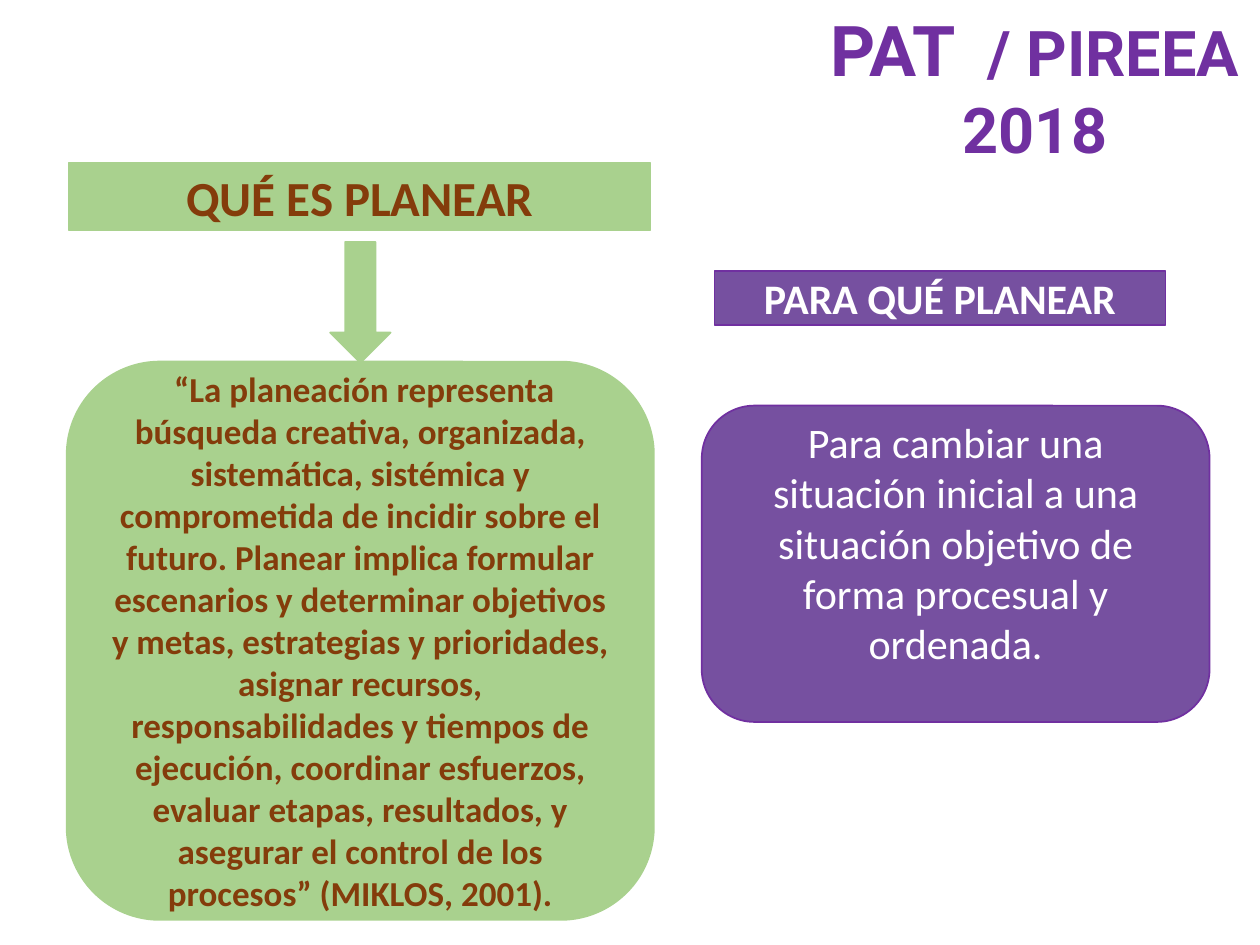
from pptx import Presentation
from pptx.dml.color import RGBColor
from pptx.enum.shapes import MSO_SHAPE
from pptx.enum.text import MSO_ANCHOR, PP_ALIGN
from pptx.util import Inches, Pt

RECT = MSO_SHAPE.RECTANGLE
ROUND = MSO_SHAPE.ROUNDED_RECTANGLE
ARROW = MSO_SHAPE.DOWN_ARROW
MIDDLE = MSO_ANCHOR.MIDDLE
CENTER = PP_ALIGN.CENTER

GREEN = RGBColor(0xA9, 0xD1, 0x8E)
BROWN = RGBColor(0x84, 0x3C, 0x0B)
PLUM = RGBColor(0x76, 0x50, 0xA0)
PURPLE = RGBColor(0x70, 0x30, 0xA0)
WHITE = RGBColor(0xFF, 0xFF, 0xFF)

WIDE, HIGH = Inches(10), Inches(7.5)

QUOTE = (
    " “La planeación representa búsqueda creativa, organizada, sistemática, "
    "sistémica y comprometida de incidir sobre el futuro. Planear implica "
    "formular escenarios y determinar objetivos y metas, estrategias y "
    "prioridades, asignar recursos, responsabilidades y tiempos de ejecución, "
    "coordinar esfuerzos, evaluar etapas, resultados, y asegurar el control "
    "de los procesos” (MIKLOS, 2001)."
)
PURPOSE = (
    "Para cambiar una situación inicial a una situación objetivo "
    "de forma procesual y ordenada."
)


def area(left, top, width, height):
    """Turn percentages of the slide's width and height into lengths."""
    return [round(share * full / 100) for share, full in
            zip((left, top, width, height), (WIDE, HIGH, WIDE, HIGH))]


def write(para, text, size, color, font="Calibri", bold=True):
    para.alignment = CENTER
    run = para.add_run()
    run.text = text
    run.font.name = font
    run.font.size = Pt(size)
    run.font.bold = bold
    run.font.color.rgb = color


def add_title(slide):
    frame = slide.shapes.add_textbox(*area(64.3, 0, 35.7, 18.4)).text_frame
    frame.word_wrap = True
    first, second = frame.paragraphs[0], frame.add_paragraph()
    look = {"color": PURPLE, "font": "Roboto"}
    write(first, "PAT", size=40, **look)
    write(first, "  / PIREEA", size=36, **look)
    write(second, "2018", size=36, **look)


def add_block(slide, kind, place, fill, edge):
    block = slide.shapes.add_shape(kind, *area(*place))
    block.shadow.inherit = False
    block.fill.solid()
    block.fill.fore_color.rgb = fill
    block.line.color.rgb = edge
    block.line.width = Pt(1)
    frame = block.text_frame
    frame.word_wrap = True
    frame.vertical_anchor = MIDDLE
    return frame


def add_card(slide, kind, place, text, fill, edge, **look):
    frame = add_block(slide, kind, place, fill, edge)
    write(frame.paragraphs[0], text, **look)
    return frame


def main():
    deck = Presentation()
    deck.slide_width, deck.slide_height = WIDE, HIGH
    slide = deck.slides.add_slide(deck.slide_layouts[6])
    add_title(slide)

    plum = {"fill": PLUM, "edge": PURPLE, "color": WHITE, "size": 24}
    goal = add_card(slide, ROUND, (55.7, 42.93, 40.3, 33.47), PURPOSE,
                    bold=False, **plum)
    goal.margin_bottom = Inches(0.39)
    add_card(slide, RECT, (56.7, 28.67, 35.8, 5.73), "PARA QUÉ PLANEAR", **plum)

    green = {"fill": GREEN, "edge": GREEN}
    add_card(slide, RECT, (5.5, 17.2, 46.1, 7.2), "QUÉ ES PLANEAR",
             size=28, color=BROWN, **green)
    add_block(slide, ARROW, (26.2, 25.6, 4.8, 12.8), **green)
    add_card(slide, ROUND, (5.3, 38.27, 46.6, 59.07), QUOTE,
             size=20, color=BROWN, **green)

    deck.save("out.pptx")


if __name__ == "__main__":
    main()
